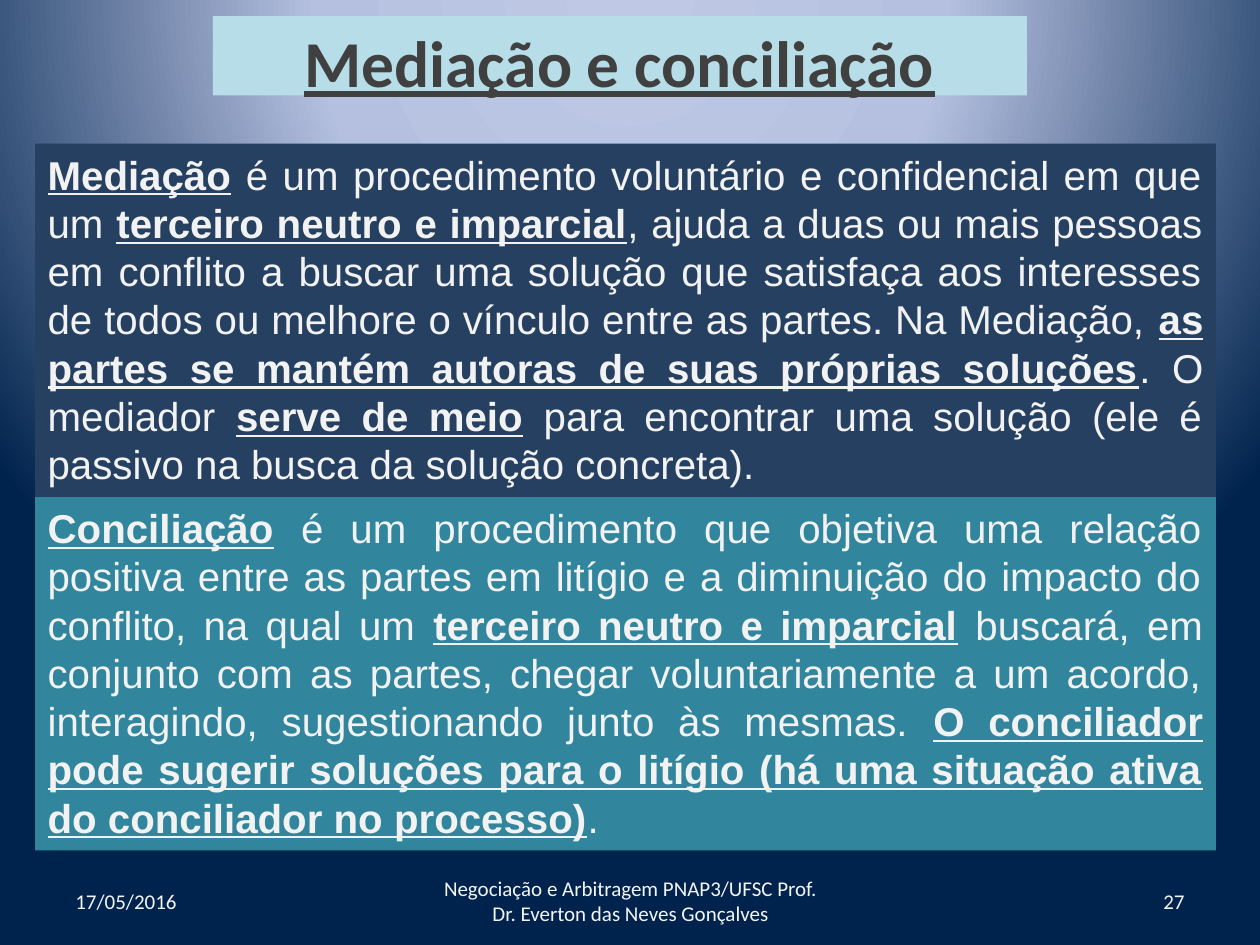
from dataclasses import dataclass

from lxml.etree import SubElement
from pptx import Presentation
from pptx.dml.color import RGBColor
from pptx.enum.shapes import MSO_SHAPE
from pptx.enum.text import MSO_ANCHOR, PP_ALIGN
from pptx.oxml.ns import qn
from pptx.util import Inches, Pt


@dataclass(frozen=True)
class Theme:
    title_fill: str = "B7DEE8"
    title_text: str = "404040"
    mediation_fill: str = "254061"
    conciliation_fill: str = "31859C"
    body_text: str = "F2F2F2"
    footer_text: str = "F5F5F5"
    glow: tuple = ((0, "BFC9E5"), (40, "B5C0E0"), (100, "00234D"))
    heading_font: str = "Calibri"
    body_font: str = "Arial"
    title_size: float = 37.4
    body_size: float = 23
    footer_size: float = 12


theme = Theme()
deck = Presentation()
deck.slide_width, deck.slide_height = Inches(10), Inches(7.5)
slide = deck.slides.add_slide(deck.slide_layouts[6])


def add_panel(left, top, width, height, fill=None):
    """Add a box placed in percent of the slide; without a fill it is a text box."""
    place = [int(share * side / 100) for share, side in (
        (left, deck.slide_width), (top, deck.slide_height),
        (width, deck.slide_width), (height, deck.slide_height))]
    if fill is None:
        panel = slide.shapes.add_textbox(*place)
    else:
        panel = slide.shapes.add_shape(MSO_SHAPE.RECTANGLE, *place)
        panel.shadow.inherit = False
        panel.fill.solid()
        panel.fill.fore_color.rgb = RGBColor.from_string(fill)
        panel.line.fill.background()
    panel.text_frame.word_wrap = True
    return panel.text_frame


def write(frame, text, align, anchor, font, size, color):
    """Fill a frame; parts between asterisks become bold and underlined."""
    frame.vertical_anchor = anchor
    paragraph = frame.paragraphs[0]
    paragraph.alignment = align
    for index, part in enumerate(text.split("*")):
        if not part:
            continue
        run = paragraph.add_run()
        run.text = part
        marked = index % 2 == 1
        looks = {"name": font, "size": Pt(size), "bold": marked, "underline": marked}
        for attribute, value in looks.items():
            setattr(run.font, attribute, value)
        run.font.color.rgb = RGBColor.from_string(color)


# Background: a circular glow centred above the slide
backdrop = slide.background.fill
backdrop.gradient()
gradient = slide.background._cSld.find(".//" + qn("a:gradFill"))
for child in list(gradient):
    gradient.remove(child)
stops = SubElement(gradient, qn("a:gsLst"))
for position, color in theme.glow:
    stop = SubElement(stops, qn("a:gs"), pos=str(position * 1000))
    SubElement(stop, qn("a:srgbClr"), val=color)
circle = SubElement(gradient, qn("a:path"), path="circle")
SubElement(circle, qn("a:fillToRect"), l="50000", t="-80000", r="50000", b="180000")

# Title
write(add_panel(16.9, 1.7, 64.6, 8.4, theme.title_fill), "*Mediação e conciliação*",
      PP_ALIGN.CENTER, MSO_ANCHOR.TOP, theme.heading_font, theme.title_size,
      theme.title_text)

# Two definitions, stacked without a gap
definitions = (
    (theme.mediation_fill,
     "*Mediação* é um procedimento voluntário e confidencial em que um "
     "*terceiro neutro e imparcial*, ajuda a duas ou mais pessoas em conflito a "
     "buscar uma solução que satisfaça aos interesses de todos ou melhore o vínculo "
     "entre as partes. Na Mediação, *as partes se mantém autoras de suas próprias "
     "soluções*. O mediador *serve de meio* para encontrar uma solução (ele é passivo "
     "na busca da solução concreta)."),
    (theme.conciliation_fill,
     "*Conciliação* é um procedimento que objetiva uma relação positiva entre as "
     "partes em litígio e a diminuição do impacto do conflito, na qual um "
     "*terceiro neutro e imparcial* buscará, em conjunto com as partes, chegar "
     "voluntariamente a um acordo, interagindo, sugestionando junto às mesmas. "
     "*O conciliador pode sugerir soluções para o litígio (há uma situação ativa do "
     "conciliador no processo)*."),
)
definition_top, definition_height = 15.2, 37.4
for row, (fill, definition) in enumerate(definitions):
    frame = add_panel(2.8, definition_top + row * definition_height,
                      93.7, definition_height, fill)
    write(frame, definition, PP_ALIGN.JUSTIFY, MSO_ANCHOR.TOP, theme.body_font,
          theme.body_size, theme.body_text)

# Footer: date, course, page number
footer = (
    (5, 23.3, PP_ALIGN.LEFT, "17/05/2016"),
    (34.2, 31.7, PP_ALIGN.CENTER,
     "Negociação e Arbitragem PNAP3/UFSC Prof. Dr. Everton das Neves Gonçalves"),
    (71.7, 23.3, PP_ALIGN.RIGHT, "27"),
)
for left, width, align, note in footer:
    write(add_panel(left, 92.7, width, 5.3), note, align, MSO_ANCHOR.MIDDLE,
          theme.heading_font, theme.footer_size, theme.footer_text)

deck.save("out.pptx")
